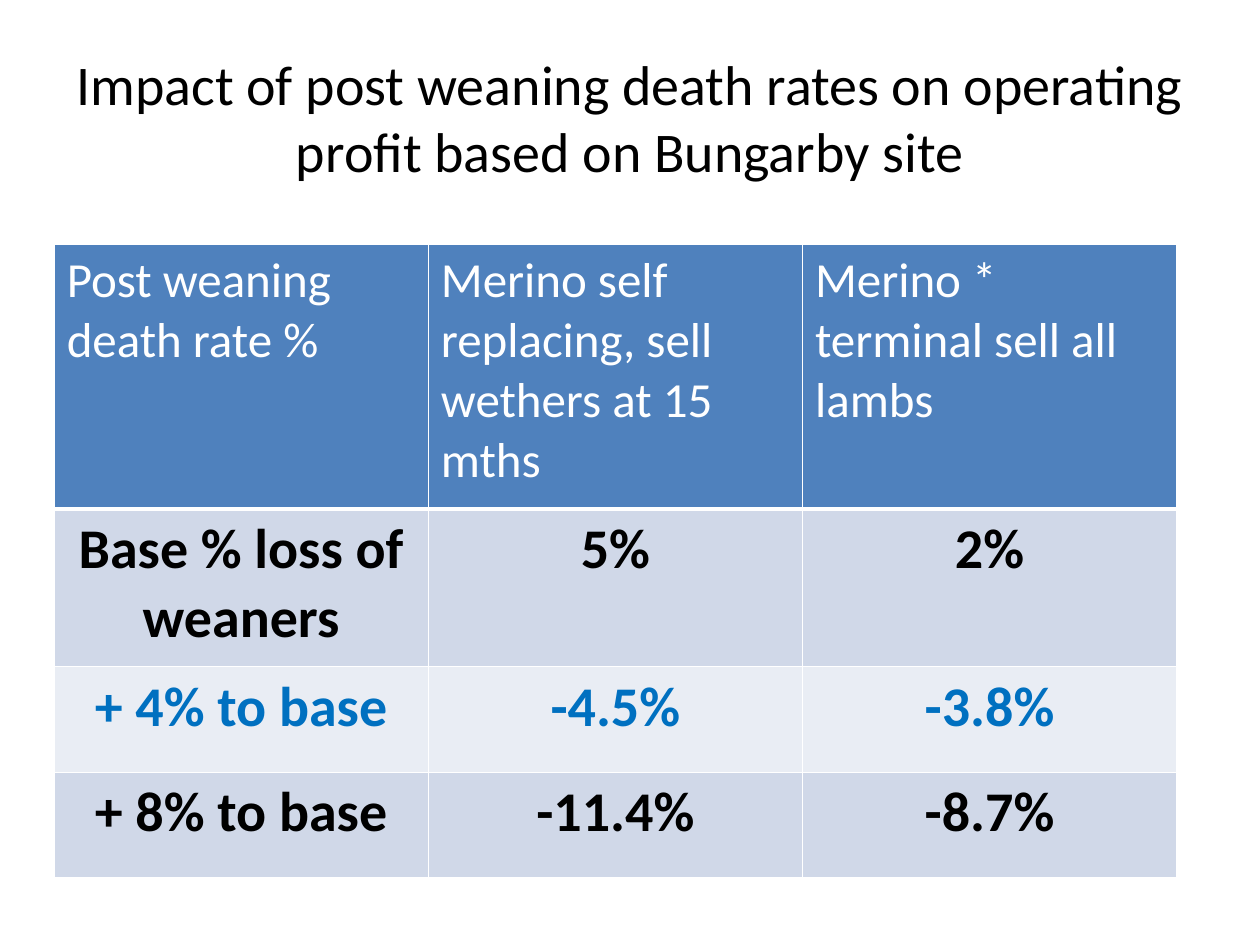
from dataclasses import dataclass

from lxml.etree import SubElement
from pptx import Presentation
from pptx.dml.color import RGBColor
from pptx.enum.text import MSO_ANCHOR as Anchor, PP_ALIGN as Align
from pptx.oxml.ns import qn
from pptx.util import Emu, Pt

EMU_PER_PX = 9144
FONT = "Calibri"
WHITE, BLACK, BLUE = "FFFFFF", "000000", "0070C0"
HEADER_FILL, DARK_BAND, LIGHT_BAND = "4F81BD", "D0D8E8", "E9EDF4"


@dataclass(frozen=True)
class TableRow:
    texts: tuple[str, ...]
    height: int
    fill: str
    color: str = BLACK
    size: int = 32
    bold: bool = True
    align: Align = Align.CENTER
    bottom_line: int = 1


ROWS = (
    TableRow(
        (
            "Post weaning death rate %",
            "Merino self replacing, sell wethers at 15 mths",
            "Merino * terminal sell all lambs",
        ),
        210, HEADER_FILL, WHITE, 28, False, Align.LEFT, 3,
    ),
    TableRow(("Base % loss of weaners", "5%", "2%"), 125, DARK_BAND),
    TableRow(("+ 4% to base", "-4.5%", "-3.8%"), 84, LIGHT_BAND, BLUE),
    TableRow(("+ 8% to base", "-11.4%", "-8.7%"), 84, DARK_BAND),
)


def px(length: int) -> Emu:
    return Emu(length * EMU_PER_PX)


def rgb(color: str) -> RGBColor:
    return RGBColor.from_string(color)


def format_text(frame, size: int, color: str, bold: bool, align: Align) -> None:
    for para in frame.paragraphs:
        para.alignment = align
        for span in para.runs:
            span.font.name = FONT
            span.font.size = Pt(size)
            span.font.bold = bold
            span.font.color.rgb = rgb(color)


def add_border(cell, side: str, width: int) -> None:
    properties = cell._tc.get_or_add_tcPr()
    line = SubElement(properties, qn(f"a:ln{side}"), w=str(Pt(width)))
    fill = SubElement(line, qn("a:solidFill"))
    SubElement(fill, qn("a:srgbClr"), val=WHITE)


def draw_cell(cell, text: str, row: TableRow) -> None:
    for side in "LRT":
        add_border(cell, side, 1)
    add_border(cell, "B", row.bottom_line)
    cell.fill.solid()
    cell.fill.fore_color.rgb = rgb(row.fill)
    cell.text_frame.text = text
    format_text(cell.text_frame, row.size, row.color, row.bold, row.align)


def draw_title(page, text: str) -> None:
    title = page.shapes.title
    title.left, title.top, title.width, title.height = map(px, (50, 30, 900, 125))
    frame = title.text_frame
    frame.text = text
    frame.word_wrap = True
    frame.vertical_anchor = Anchor.MIDDLE
    format_text(frame, 32, BLACK, False, Align.CENTER)


def draw_table(page, rows: tuple[TableRow, ...]) -> None:
    columns = len(rows[0].texts)
    height = sum(row.height for row in rows)
    table = page.shapes.add_table(
        len(rows), columns, px(43), px(194), px(297 * columns), px(height)
    ).table
    for row_index, row in enumerate(rows):
        table.rows[row_index].height = px(row.height)
        for column_index, text in enumerate(row.texts):
            draw_cell(table.cell(row_index, column_index), text, row)


def main() -> None:
    deck = Presentation()
    deck.slide_width, deck.slide_height = px(1000), px(750)
    page = deck.slides.add_slide(deck.slide_layouts.get_by_name("Title Only"))
    draw_title(
        page,
        "Impact of post weaning death rates on operating profit based on Bungarby site",
    )
    draw_table(page, ROWS)
    deck.save("out.pptx")


if __name__ == "__main__":
    main()
